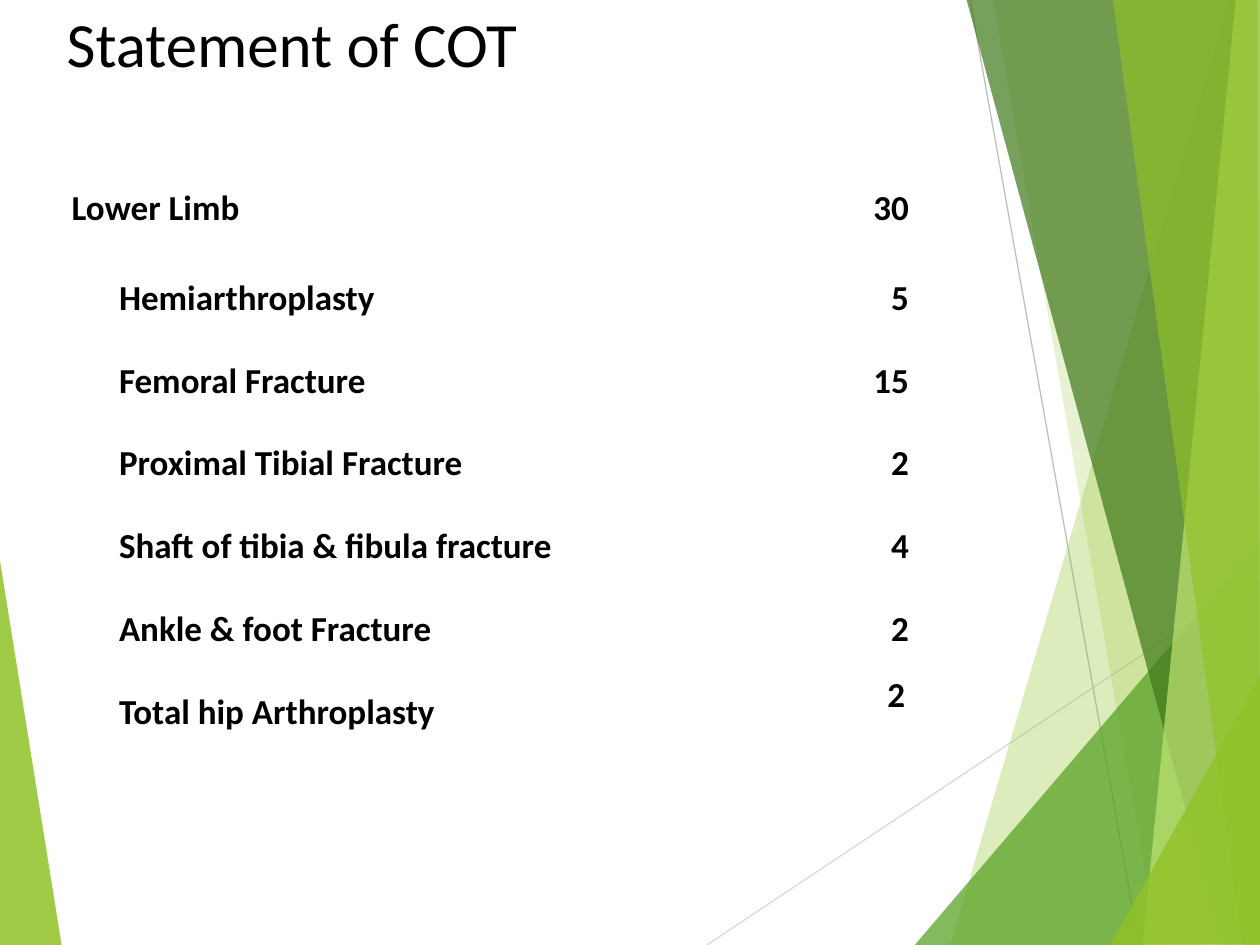
from lxml import etree
from pptx import Presentation
from pptx.dml.color import RGBColor
from pptx.enum.shapes import MSO_CONNECTOR
from pptx.enum.text import MSO_ANCHOR, PP_ALIGN
from pptx.oxml.ns import qn
from pptx.util import Pt

STRAIGHT = MSO_CONNECTOR.STRAIGHT
TOP, MIDDLE = MSO_ANCHOR.TOP, MSO_ANCHOR.MIDDLE
LEFT, RIGHT = PP_ALIGN.LEFT, PP_ALIGN.RIGHT
FONT = "Calibri"
WIDTH, HEIGHT = 720, 540
COLORS = {
    "text": "000000",
    "lime": "90C226",
    "green": "54A021",
    "forest": "3F7819",
    "pale": "C0E474",
    "pale_ray": "D9D9D9",
    "ray": "BFBFBF",
}
LEFT_FACET = ("lime", 85, [(-0.72, 316), (35.3, 540.7), (-0.72, 540)])
RAYS = [
    ("pale_ray", (404, 540), (720.7, 329)),
    ("ray", (554.4, 0), (650.9, 540)),
]
RIGHT_FACETS = [
    ("lime", 30, [(702, 0), (543, 540), (721.4, 540.7), (720.7, 0.7)]),
    ("lime", 20, [(567.4, -0.7), (661.7, 540), (720.7, 540), (720.7, -0.7)]),
    ("green", 72, [(522.7, 540), (720, 309), (720.7, 540)]),
    ("forest", 70, [(552.2, -0.7), (698.4, 540), (720.7, 539.3), (720.7, -0.7)]),
    ("pale", 70, [(706.3, -0.7), (653, 540), (720.7, 540), (720, -0.7)]),
    ("lime", 65, [(635.8, -0.7), (710, 540), (720, 540), (718.6, -0.7)]),
    ("lime", 80, [(634.3, 540), (720.7, 385.2), (720.7, 539.3)]),
]
CASES = [
    ("Lower Limb", 30),
    ("Hemiarthroplasty", 5),
    ("Femoral Fracture", 15),
    ("Proximal Tibial Fracture", 2),
    ("Shaft of tibia & fibula fracture", 4),
    ("Ankle & foot Fracture", 2),
    ("Total hip Arthroplasty", 2),
]


def rgb(name):
    """Return the named palette colour."""
    return RGBColor.from_string(COLORS[name])


def add_text(frame, text, size, bold=False, align=LEFT):
    """Write one run into the first paragraph and return the paragraph."""
    paragraph = frame.paragraphs[0]
    paragraph.alignment = align
    run = paragraph.add_run()
    run.text = text
    run.font.name = FONT
    run.font.size = Pt(size)
    run.font.bold = bold
    run.font.color.rgb = rgb("text")
    return paragraph


def add_facet(slide, left, top, color, opacity, corners):
    """Draw a translucent polygon offset by the region's corner."""
    points = [(Pt(left + x), Pt(top + y)) for x, y in corners]
    builder = slide.shapes.build_freeform(*points[0])
    builder.add_line_segments(points[1:], close=True)
    facet = builder.convert_to_shape()
    facet.shadow.inherit = False
    facet.fill.solid()
    facet.fill.fore_color.rgb = rgb(color)
    facet.line.fill.background()
    tint = facet._element.spPr.find(qn("a:solidFill")).find(qn("a:srgbClr"))
    etree.SubElement(tint, qn("a:alpha")).set("val", str(opacity * 1000))


def add_ray(slide, left, top, color, start, end):
    """Draw a thin straight line offset by the region's corner."""
    ray = slide.shapes.add_connector(
        STRAIGHT,
        Pt(left + start[0]), Pt(top + start[1]),
        Pt(left + end[0]), Pt(top + end[1]),
    )
    ray.line.color.rgb = rgb(color)
    ray.line.width = Pt(0.75)
    etree.SubElement(ray._element.spPr, qn("a:effectLst"))


def add_backdrop(slide, left, top):
    """Place the green facets and grey rays from back to front."""
    add_facet(slide, left, top, *LEFT_FACET)
    for ray in RAYS:
        add_ray(slide, left, top, *ray)
    for facet in RIGHT_FACETS:
        add_facet(slide, left, top, *facet)


def add_title(slide, left, top, width, height):
    """Place the slide heading."""
    heading = slide.shapes.add_textbox(Pt(left), Pt(top), Pt(width), Pt(height))
    heading.text_frame.word_wrap = True
    heading.text_frame.vertical_anchor = TOP
    add_text(heading.text_frame, "Statement of COT", 36)


def add_case_table(slide, left, top, width, height):
    """Place the table of procedures and their counts."""
    table = slide.shapes.add_table(
        len(CASES), 2, Pt(left), Pt(top), Pt(width), Pt(height)
    ).table
    table.first_row = table.horz_banding = False
    name_width, total_height = 287, 56
    table.columns[0].width = Pt(name_width)
    table.columns[1].width = Pt(width - name_width)
    case_height = (height - total_height) / (len(CASES) - 1)
    last = len(CASES) - 1
    for index, (procedure, count) in enumerate(CASES):
        table.rows[index].height = Pt(case_height if index else total_height)
        for column, (text, align) in enumerate([(procedure, LEFT), (str(count), RIGHT)]):
            cell = table.cell(index, column)
            cell.fill.background()
            paragraph = add_text(cell.text_frame, text, 20, True, align)
            if (index, column) == (last, 1):
                continue
            cell.vertical_anchor = MIDDLE
            cell.margin_left = cell.margin_right = Pt(5)
            cell.margin_top = cell.margin_bottom = Pt(0)
            paragraph.line_spacing = 1.13
            if index and column == 0:
                properties = paragraph._p.get_or_add_pPr()
                properties.set("marL", str(Pt(27)))
                properties.set("indent", "0")


def main():
    """Build and save the slide."""
    deck = Presentation()
    deck.slide_width, deck.slide_height = Pt(WIDTH), Pt(HEIGHT)
    slide = deck.slides.add_slide(deck.slide_layouts[6])
    add_backdrop(slide, 0, 0)
    add_title(slide, 31, -0.7, 648, 90)
    add_case_table(slide, 36, 89.3, 488.4, 340)
    deck.save("out.pptx")


if __name__ == "__main__":
    main()
